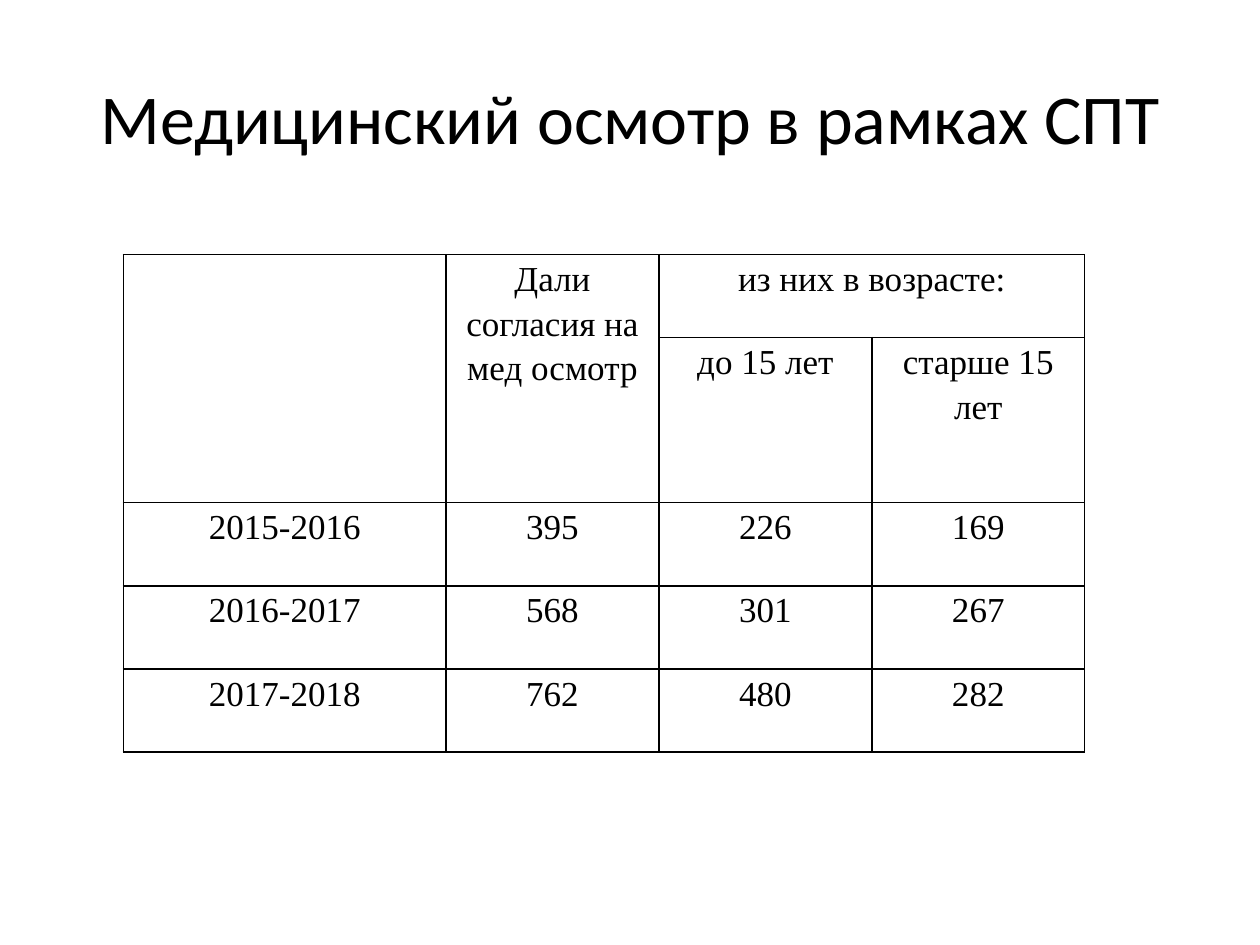
from dataclasses import dataclass

from lxml import etree
from pptx import Presentation
from pptx.dml.color import RGBColor
from pptx.enum import text
from pptx.oxml import ns
from pptx.util import Inches, Pt


@dataclass(frozen=True)
class Theme:
    ink: RGBColor = RGBColor(0, 0, 0)
    title_font: str = "Calibri"
    title_size: Pt = Pt(40)
    table_font: str = "Times New Roman"
    table_size: Pt = Pt(20)
    border: Pt = Pt(1)


theme = Theme()


def add_borders(cell):
    """Draw all four edges; the schema wants them ahead of the cell fill."""
    properties = cell._tc.get_or_add_tcPr()
    for position, edge in enumerate(("lnL", "lnR", "lnT", "lnB")):
        line = etree.Element(ns.qn(f"a:{edge}"), w=str(theme.border))
        solid = etree.SubElement(line, ns.qn("a:solidFill"))
        etree.SubElement(solid, ns.qn("a:srgbClr"), val=str(theme.ink))
        properties.insert(position, line)


def style_text(paragraph, font_name, size):
    paragraph.alignment = text.PP_ALIGN.CENTER
    paragraph.font.name = font_name
    paragraph.font.size = size
    paragraph.font.bold = False
    paragraph.font.color.rgb = theme.ink


prs = Presentation()
prs.slide_width, prs.slide_height = Inches(10), Inches(7.5)
slide = prs.slides.add_slide(prs.slide_layouts[5])

title = slide.shapes.title
title.left, title.top = Inches(0.5), Inches(0.3)
title.width, title.height = Inches(9), Inches(1.25)
title.text_frame.text = "Медицинский осмотр в рамках СПТ"
title.text_frame.vertical_anchor = text.MSO_ANCHOR.MIDDLE
style_text(title.text_frame.paragraphs[0], theme.title_font, theme.title_size)

checkups = [
    ["", "Дали согласия на мед осмотр", "из них в возрасте:", ""],
    ["", "", "до 15 лет", "старше 15 лет"],
    ["2015-2016", "395", "226", "169"],
    ["2016-2017", "568", "301", "267"],
    ["2017-2018", "762", "480", "282"],
]
column_widths = [2.56, 1.69, 1.69, 1.69]
row_heights = [0.66, 1.31, 0.66, 0.66, 0.66]

table = slide.shapes.add_table(
    len(checkups), len(column_widths), Inches(0.98), Inches(2.02),
    Inches(sum(column_widths)), Inches(sum(row_heights))).table
table.first_row = table.horz_banding = False
for column, width in zip(table.columns, column_widths):
    column.width = Inches(width)
for row, height in zip(table.rows, row_heights):
    row.height = Inches(height)

for row, values in zip(table.rows, checkups):
    for cell, value in zip(row.cells, values):
        cell.margin_left = cell.margin_right = Inches(0.07)
        cell.margin_top = cell.margin_bottom = 0
        cell.fill.background()
        add_borders(cell)
        if value:
            cell.text = value
            paragraph = cell.text_frame.paragraphs[0]
            paragraph.line_spacing = 1.15
            style_text(paragraph, theme.table_font, theme.table_size)

for first, last in [((0, 0), (1, 0)), ((0, 1), (1, 1)), ((0, 2), (0, 3))]:
    table.cell(*first).merge(table.cell(*last))

prs.save("out.pptx")
